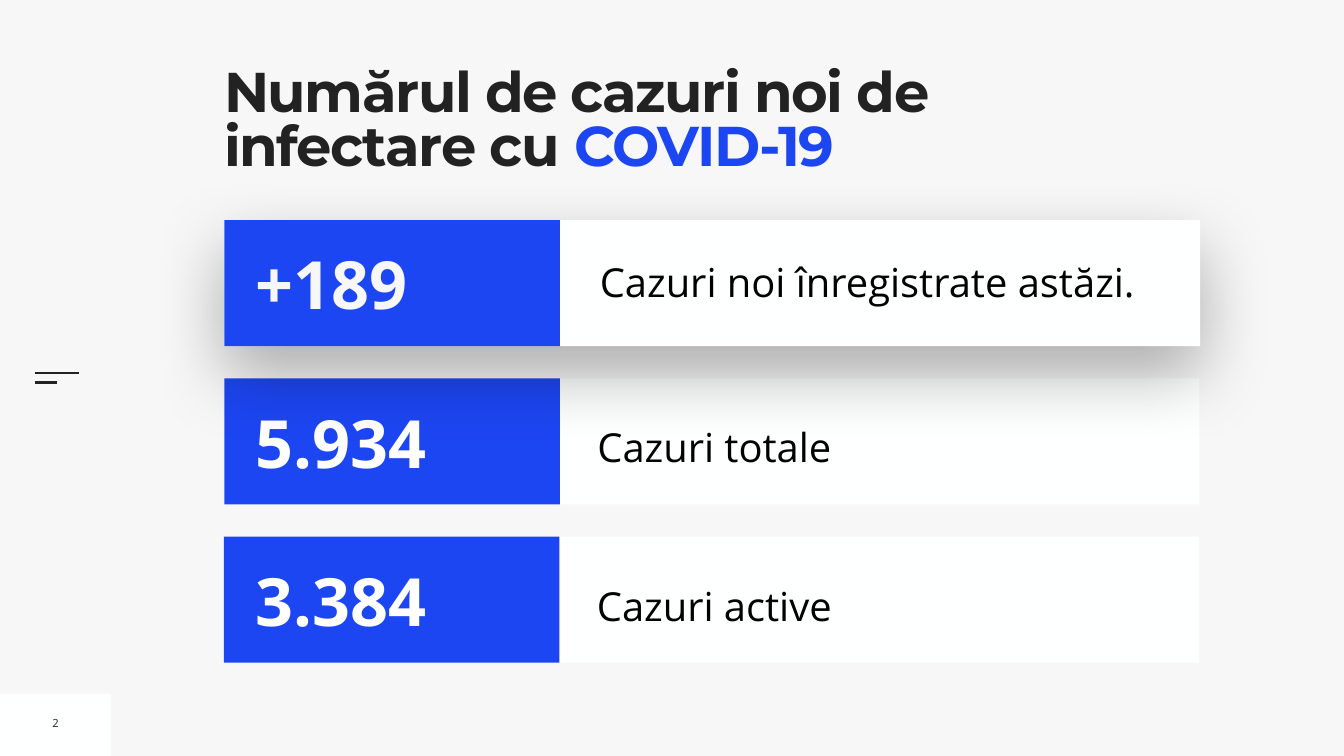
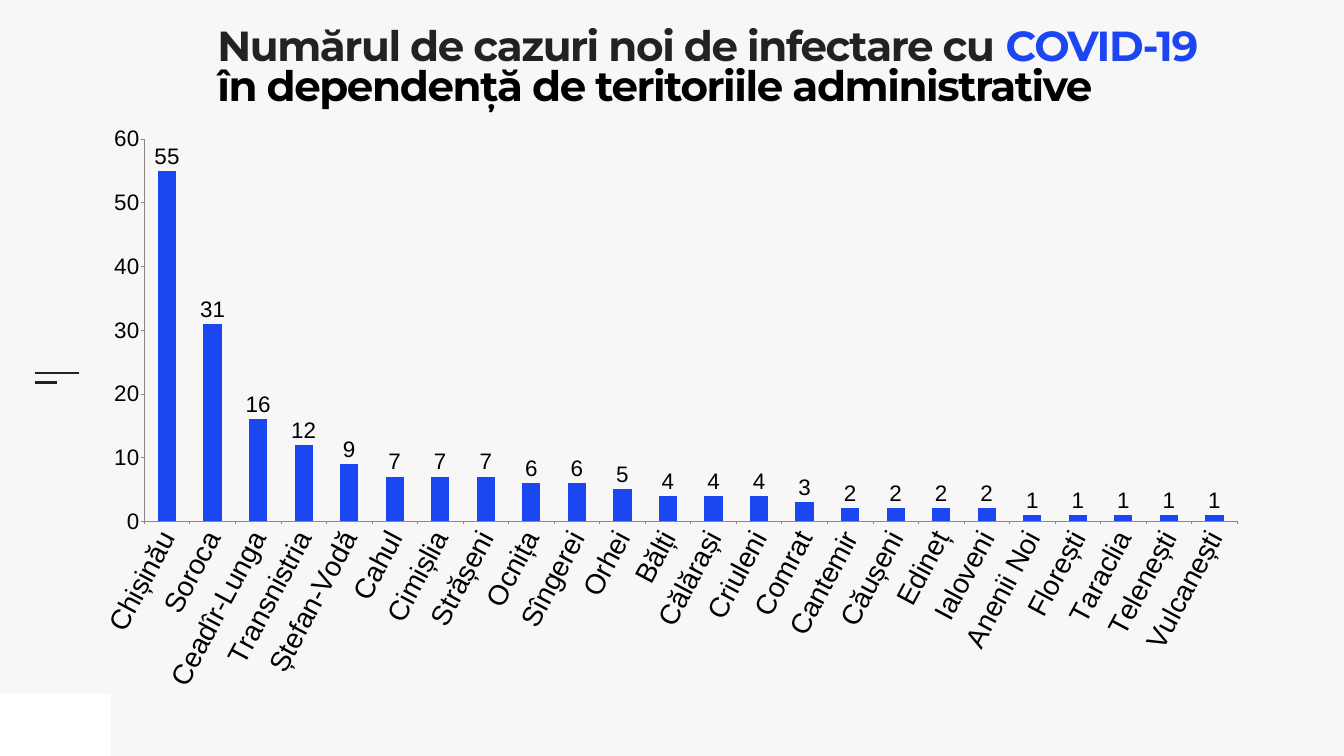
from lxml import etree
from pptx import Presentation
from pptx.chart.data import CategoryChartData
from pptx.dml.color import RGBColor
from pptx.enum.chart import XL_CHART_TYPE, XL_LABEL_POSITION, XL_TICK_MARK
from pptx.enum.shapes import MSO_CONNECTOR, MSO_SHAPE
from pptx.enum.text import MSO_ANCHOR, PP_ALIGN
from pptx.oxml import parse_xml
from pptx.oxml.ns import nsdecls, qn
from pptx.util import Pt

COLUMNS = XL_CHART_TYPE.COLUMN_CLUSTERED
OUTSIDE_END = XL_LABEL_POSITION.OUTSIDE_END
TICK_OUT = XL_TICK_MARK.OUTSIDE
TOP, MIDDLE = MSO_ANCHOR.TOP, MSO_ANCHOR.MIDDLE
LEFT, CENTER = PP_ALIGN.LEFT, PP_ALIGN.CENTER
RECT, STRAIGHT = MSO_SHAPE.RECTANGLE, MSO_CONNECTOR.STRAIGHT

COLORS = {
    name: RGBColor.from_string(value)
    for name, value in {
        "background": "F7F7F7", "panel": "FEFFFF", "blue": "1D46F3",
        "dark": "222222", "black": "000000", "white": "FFFFFF", "axis": "888888",
    }.items()
}


def add_rect(shapes, x, y, w, h, color):
    sp = shapes.add_shape(RECT, Pt(x), Pt(y), Pt(w), Pt(h))
    sp.shadow.inherit = False
    sp.fill.solid()
    sp.fill.fore_color.rgb = COLORS[color]
    sp.line.fill.background()
    return sp


def add_text(shapes, box, lines, font, size, bold=False, anchor=MIDDLE,
             inset=0, wrap=True, spacing=0, **paragraph):
    """Add a text box; lines is a list of lists of (text, colour name)."""
    tf = shapes.add_textbox(*map(Pt, box)).text_frame
    frame = {"word_wrap": wrap, "vertical_anchor": anchor}
    for side in ("left", "right", "top", "bottom"):
        frame[f"margin_{side}"] = Pt(inset)
    for key, value in frame.items():
        setattr(tf, key, value)
    for i, line in enumerate(lines):
        p = tf.paragraphs[0] if i == 0 else tf.add_paragraph()
        for key, value in paragraph.items():
            setattr(p, key, value)
        for text, color in line:
            r = p.add_run()
            r.text = text
            for key, value in {"name": font, "size": Pt(size), "bold": bold}.items():
                setattr(r.font, key, value)
            r.font.color.rgb = COLORS[color]
            if spacing:
                r.font._element.set("spc", str(spacing * 100))


prs = Presentation()
prs.slide_width, prs.slide_height = Pt(1920), Pt(1080)

# Background, corner panel and menu mark on both slides
for _ in range(2):
    s = prs.slides.add_slide(prs.slide_layouts[6])
    s.background.fill.solid()
    s.background.fill.fore_color.rgb = COLORS["background"]
    add_rect(s.shapes, 0, 991, 158.5, 89, "panel")
    for y, length in ((533.5, 63.5), (546.5, 32)):
        line = s.shapes.add_connector(STRAIGHT, Pt(49.5), Pt(y), Pt(49.5 + length), Pt(y))
        line.line.color.rgb = COLORS["dark"]
        line.line.width = Pt(3)
        etree.SubElement(line._element.spPr, qn("a:effectLst"))

summary, regions = prs.slides
TITLE = {"font": "Montserrat", "bold": True, "anchor": TOP, "spacing": -2,
         "alignment": LEFT, "line_spacing": 0.8}

# Slide 1: three figure cards
add_text(summary.shapes, (67, 1014.5, 24.5, 36.5), [[("2", "dark")]],
         "Open Sans", 16, inset=7.2, wrap=False, alignment=CENTER)
add_text(summary.shapes, (320, 100, 1441, 197),
         [[("Numărul de cazuri noi de", "dark")],
          [("infectare cu ", "dark"), ("COVID-19", "blue")]], size=80, **TITLE)

CARD_TOP, CARD_PITCH, CARD_H = 314.6, 226.1, 180
PLAIN = {"line_spacing": 1.3, "space_before": Pt(20)}
# The highlighted card comes after the second so that its shadow falls on it
cards = [
    (1, 320.4, "5.934", "white", "Cazuri totale", 0, PLAIN),
    (0, 320.4, "+189", "background", "Cazuri noi înregistrate astăzi.", 7.2, {}),
    (2, 319.7, "3.384", "white", "Cazuri active", 0, PLAIN),
]
for row, x, number, number_color, label, inset, label_format in cards:
    y = CARD_TOP + row * CARD_PITCH
    card = summary.shapes.add_group_shape().shapes
    panel = add_rect(card, x, y, 1394 if row == 0 else 1393, CARD_H, "panel")
    if row == 0:
        effects = panel._element.spPr.find(qn("a:effectLst"))
        effects.append(parse_xml(
            f'<a:outerShdw {nsdecls("a")} blurRad="{Pt(100)}" dist="{Pt(40)}" '
            'dir="5400000" rotWithShape="0"><a:srgbClr val="000000">'
            '<a:alpha val="30000"/></a:srgbClr></a:outerShdw>'))
    add_text(card, (x + 533 - inset / 2, y + 47, 840, 81), [[(label, "black")]],
             "Open Sans", 57, inset=inset, **label_format)
    add_rect(card, x, y, 479.5, CARD_H, "blue")
    add_text(card, (x + 38, y + 25, 434, 130), [[(number, number_color)]],
             "Open Sans", 95, bold=True, inset=7.2)

# Slide 2: new cases by territory
add_text(regions.shapes, (310.5, 42, 1441, 197),
         [[("Numărul de cazuri noi de infectare cu ", "dark"), ("COVID-19", "blue")],
          [("în dependență de teritoriile administrative", "black")]], size=60, **TITLE)

cases = {
    "Chișinău": 55, "Soroca": 31, "Ceadîr-Lunga": 16, "Transnistria": 12,
    "Ștefan-Vodă": 9, "Cahul": 7, "Cimișlia": 7, "Strășeni": 7, "Ocnița": 6,
    "Sîngerei": 6, "Orhei": 5, "Bălți": 4, "Călărași": 4, "Criuleni": 4,
    "Comrat": 3, "Cantemir": 2, "Căușeni": 2, "Edineț": 2, "Ialoveni": 2,
    "Anenii Noi": 1, "Florești": 1, "Taraclia": 1, "Telenești": 1, "Vulcanești": 1,
}
data = CategoryChartData()
data.categories = list(cases)
data.add_series("Series 1", list(cases.values()))
chart = regions.shapes.add_chart(COLUMNS, Pt(132), Pt(180), Pt(1647), Pt(853), data).chart
chart.has_legend = chart.has_title = False
chart.font.name = "Arial"
chart.font.size = Pt(40)
chart.font.color.rgb = COLORS["black"]

plot = chart.plots[0]
plot.gap_width = 150
plot.vary_by_categories = False
fill = plot.series[0].format.fill
fill.solid()
fill.fore_color.rgb = COLORS["blue"]
plot.has_data_labels = True
labels = plot.data_labels
labels.show_value = True
labels.position = OUTSIDE_END

value_axis, category_axis = chart.value_axis, chart.category_axis
scale = {"minimum_scale": 0, "maximum_scale": 60, "major_unit": 10,
         "has_major_gridlines": False}
for key, value in scale.items():
    setattr(value_axis, key, value)
for axis in (value_axis, category_axis):
    axis.major_tick_mark = TICK_OUT
    axis.format.line.color.rgb = COLORS["axis"]
    axis.format.line.width = Pt(1)
for font, size in ((value_axis.tick_labels.font, 32),
                   (category_axis.tick_labels.font, 40), (labels.font, 32)):
    font.name = "Arial"
    font.size = Pt(size)
    font.color.rgb = COLORS["black"]
category_axis._element.find(qn("c:txPr")).find(qn("a:bodyPr")).set("rot", str(-62 * 60000))

plot_area = chart._chartSpace.chart.plotArea
for old in plot_area.findall(qn("c:layout")):
    plot_area.remove(old)
position = "".join(f'<c:{key} val="{value}"/>' for key, value in (
    ("layoutTarget", "inner"), ("xMode", "edge"), ("yMode", "edge"),
    ("x", 0.045), ("y", 0.022), ("w", 0.948), ("h", 0.64)))
plot_area.insert(0, parse_xml(
    f'<c:layout {nsdecls("c")}><c:manualLayout>{position}</c:manualLayout></c:layout>'))

prs.save("out.pptx")
